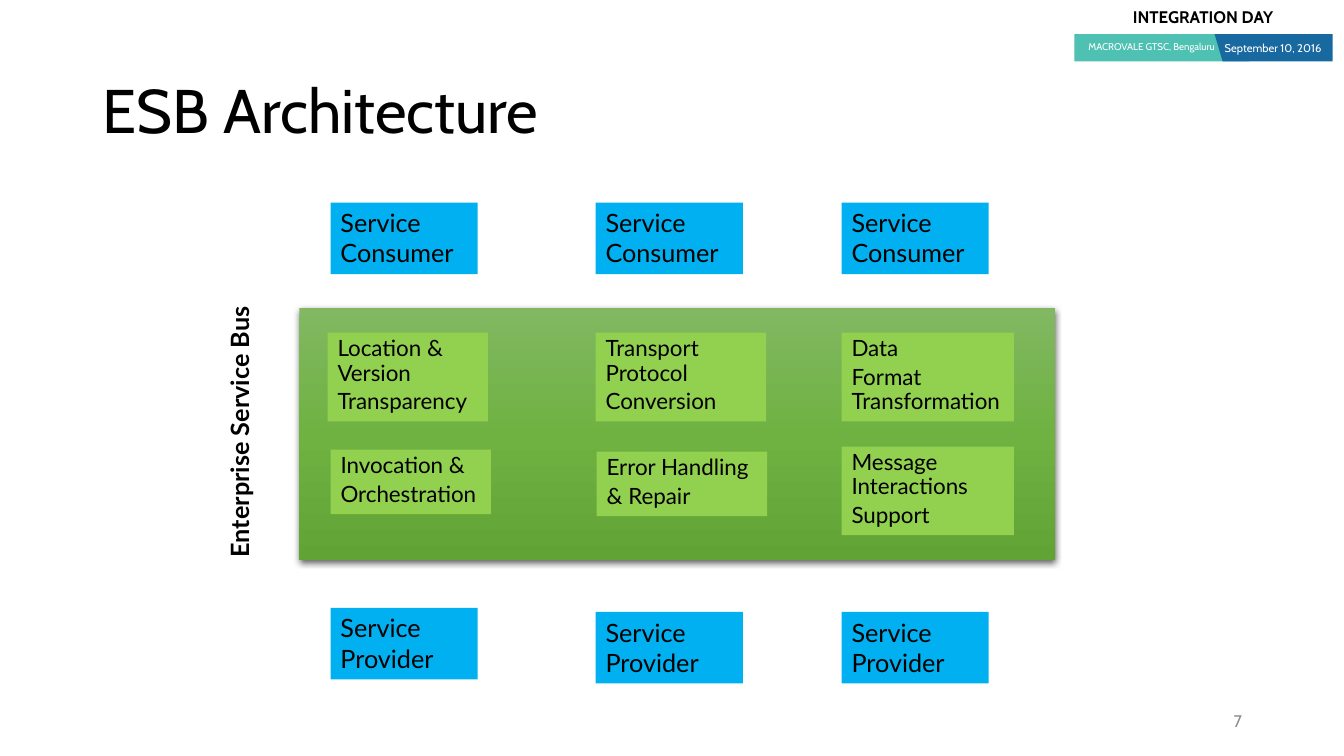
import copy

import pptx
import pptx.dml.color
import pptx.enum.shapes
import pptx.enum.text
import pptx.oxml
import pptx.oxml.ns
import pptx.util

SHAPE = pptx.enum.shapes.MSO_SHAPE
ALIGN = pptx.enum.text.PP_ALIGN
ANCHOR = pptx.enum.text.MSO_ANCHOR
UNIT = pptx.util.Inches(7.5) / 90  # the slide is a grid of 160 columns by 90 rows

COLORS = {
    "black": "000000", "white": "FFFFFF", "grey": "8C8C8C",
    "teal": "4EC1B2", "navy": "1969A1",
    "endpoint": "00B0F0", "service": "92D050",
    "bus_top": "81B861", "bus_middle": "6FB242", "bus_bottom": "62A336",
}
COLUMNS = (39.36, 70.92, 100.2)
SERVICE_WIDTHS = (19.08, 20.28, 20.52)
ENDPOINT_SIZE = (17.52, 8.52)
ENDPOINTS = (
    ("Service Consumer", (24.12, 24.12, 24.12)),
    ("Service Provider", (72.36, 72.84, 72.84)),
)
# Each service: column, left shift, row, height, paragraphs
SERVICES = (
    (0, -0.36, 39.6, 10.56, ("Location & Version", "Transparency")),
    (1, 0, 39.6, 10.56, ("Transport Protocol", "Conversion")),
    (2, 0, 39.6, 10.56, ("Data", "Format Transformation")),
    (0, 0, 53.52, 7.68, ("Invocation &", "Orchestration")),
    (1, 0.12, 53.76, 7.68, ("Error Handling", "& Repair")),
    (2, 0, 53.16, 10.56, ("Message Interactions", "Support")),
)


def rgb(name):
    return pptx.dml.color.RGBColor.from_string(COLORS[name])


def grid(*cells):
    return [round(c * UNIT) for c in cells]


def write(sp, *lines, size, font="Cabin", color="black", bold=False, align=ALIGN.LEFT,
          anchor=ANCHOR.TOP, spacing=1.0, before=0, wrap=True):
    """Fill a shape with one paragraph per line."""
    tf = sp.text_frame
    tf.word_wrap = wrap
    tf.vertical_anchor = anchor
    for i, line in enumerate(lines):
        p = tf.add_paragraph() if i else tf.paragraphs[0]
        p.alignment = align
        p.line_spacing = spacing
        if i:
            p.space_before = pptx.util.Pt(before)
        r = p.add_run()
        r.text = line
        r.font.size = pptx.util.Pt(size)
        r.font.name = font
        r.font.bold = bold
        r.font.color.rgb = rgb(color)


def add_label(s, cells, text, **style):
    sp = s.shapes.add_textbox(*grid(*cells))
    write(sp, text, **style)
    return sp


def paint(sp, color):
    sp.shadow.inherit = False
    sp.line.fill.background()
    sp.fill.solid()
    sp.fill.fore_color.rgb = rgb(color)


def add_block(s, cells, color):
    sp = s.shapes.add_shape(SHAPE.RECTANGLE, *grid(*cells))
    paint(sp, color)
    return sp


def add_header(s):
    add_label(s, (133.68, 0.24, 21.72, 3.6), "INTEGRATION DAY", size=12, bold=True)
    add_block(s, (127.92, 4.08, 20.76, 3.24), "teal")
    corners = [grid(*c) for c in ((144.6, 4.08), (145.56, 7.32), (158.64, 7.32), (158.64, 4.08))]
    builder = s.shapes.build_freeform(*corners[0])
    builder.add_line_segments(corners[1:], close=True)
    paint(builder.convert_to_shape(), "navy")
    add_label(s, (126.72, 4.32, 19.08, 2.76), "MACROVALE GTSC, Bengaluru",
              size=7, color="white", align=ALIGN.RIGHT)
    add_label(s, (144.6, 4.32, 15.36, 2.88), "September 10, 2016", size=8, color="white")


def add_bus(s):
    """Draw the bus panel with a three-stop gradient and a soft shadow."""
    sp = s.shapes.add_shape(SHAPE.ROUNDED_RECTANGLE, *grid(35.64, 36.72, 90, 30))
    sp.adjustments[0] = 0
    sp.line.fill.background()
    sp.fill.gradient()
    sp.fill.gradient_angle = 270
    qn = pptx.oxml.ns.qn
    props = sp.element.spPr
    stops = props.find(".//" + qn("a:gsLst"))
    stops.insert(1, copy.deepcopy(stops[0]))
    for i, (stop, name) in enumerate(zip(sp.fill.gradient_stops,
                                         ("bus_top", "bus_middle", "bus_bottom"))):
        stop.position = i / 2
        stop.color.rgb = rgb(name)
    sp.shadow.inherit = False
    props.find(qn("a:effectLst")).append(pptx.oxml.parse_xml(
        f'<a:outerShdw {pptx.oxml.ns.nsdecls("a")} blurRad="57150" dist="19050" '
        f'dir="5400000" algn="ctr" rotWithShape="0"><a:srgbClr val="{COLORS["black"]}">'
        '<a:alpha val="63000"/></a:srgbClr></a:outerShdw>'))


def main():
    prs = pptx.Presentation()
    prs.slide_width, prs.slide_height = grid(160, 90)
    s = prs.slides.add_slide(prs.slide_layouts[6])

    add_header(s)
    add_label(s, (113.04, 83.4, 36, 4.8), "7", size=12, color="grey",
              align=ALIGN.RIGHT, anchor=ANCHOR.MIDDLE)
    add_label(s, (11.04, 4.8, 138, 17.4), "ESB Architecture", size=44,
              anchor=ANCHOR.MIDDLE, spacing=0.9)

    add_bus(s)
    bus_name = add_label(s, (11.76, 49.2, 33.84, 4.44), "Enterprise Service Bus", size=18,
                         font="Lato", bold=True, align=ALIGN.CENTER, spacing=0.9, wrap=False)
    bus_name.rotation = 270
    for col, shift, row, height, lines in SERVICES:
        sp = add_block(s, (COLUMNS[col] + shift, row, SERVICE_WIDTHS[col], height), "service")
        write(sp, *lines, size=16, font="Lato", spacing=0.9, before=3.2)

    for text, rows in ENDPOINTS:
        for col, row in zip(COLUMNS, rows):
            sp = add_block(s, (col, row, *ENDPOINT_SIZE), "endpoint")
            write(sp, text, size=18, font="Lato")

    prs.save("out.pptx")


if __name__ == "__main__":
    main()
